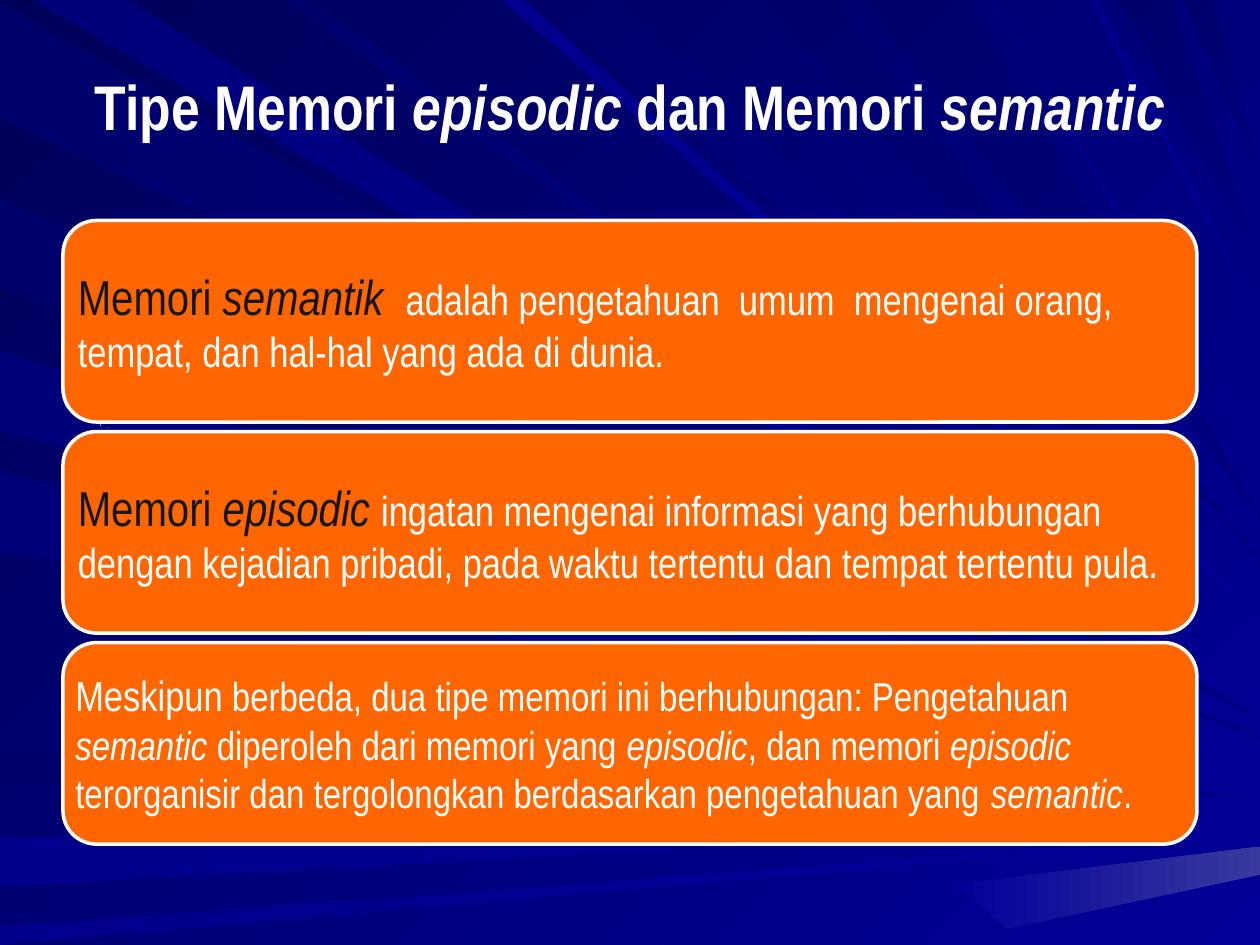
from lxml import etree
from pptx import Presentation
from pptx.dml.color import RGBColor
from pptx.enum.shapes import MSO_SHAPE
from pptx.enum.text import MSO_ANCHOR, PP_ALIGN
from pptx.oxml.ns import qn
from pptx.util import Inches, Pt

ROUND = MSO_SHAPE.ROUNDED_RECTANGLE
MIDDLE = MSO_ANCHOR.MIDDLE
LEFT, CENTER = PP_ALIGN.LEFT, PP_ALIGN.CENTER

COLORS = {"white": "FFFFFF", "ink": "161616", "card": "FF6600",
          "night": "000058", "deep": "00006C", "mid": "00007B",
          "dusk": "000080", "pale": "00008C", "blue": "000099",
          "glint": "39399E"}
NARROW = "Arial Narrow"
WIDE, HIGH = 10, 7.5

# Runs: text, size, colour, italic
TITLE = [("Tipe Memori ", 36, "white", False), ("episodic", 36, "white", True),
         (" dan Memori ", 36, "white", False), ("semantic", 36, "white", True)]

# Cards: text inset, runs
CARDS = [
    (0.04, [
        ("Memori ", 28, "ink", False), ("semantik  ", 28, "ink", True),
        ("adalah pengetahuan  umum  mengenai orang, tempat, dan hal-hal "
         "yang ada di dunia.", 24, "white", False)]),
    (0.04, [
        ("Memori ", 28, "ink", False), ("episodic ", 28, "ink", True),
        ("ingatan mengenai informasi yang berhubungan dengan kejadian pribadi, "
         "pada waktu tertentu dan tempat tertentu pula.", 24, "white", False)]),
    (0.02, [
        ("Meskipun", 24, "white", False),
        (" berbeda, dua tipe memori ini berhubungan: Pengetahuan ", 23, "white", False),
        ("semantic", 23, "white", True),
        (" diperoleh dari memori yang ", 23, "white", False),
        ("episodic", 23, "white", True),
        (", dan memori ", 23, "white", False),
        ("episodic", 23, "white", True),
        (" terorganisir dan tergolongkan berdasarkan pengetahuan yang ", 23, "white", False),
        ("semantic", 23, "white", True), (".", 23, "white", False)]),
]

# Rays: start and end on the edge, height of the tip at the right, colours
LEFT_RAYS = [
    (0.02, 0.93, 5.7, "deep", "dusk"), (1.59, 2.28, 5.85, "deep", "dusk"),
    (2.78, 3.42, 6, "mid", "blue"), (3.74, 4.37, 6.06, "mid", "blue"),
    (5.96, 6.23, 6.32, "deep", "dusk"), (6.65, 7.04, 6.48, "pale", "blue"),
    (7.35, 7.5, 6.62, "pale", "blue"),
]
TOP_RAYS = [
    (0.26, 1.01, 5.63, "mid", "blue"), (2.25, 2.47, 5.5, "deep", "blue"),
    (3.98, 4.16, 5.2, "pale", "blue"), (4.26, 4.92, 4.9, "deep", "blue"),
    (5.4, 5.52, 4.63, "deep", "blue"), (6.06, 6.61, 4.46, "deep", "dusk"),
    (6.86, 7.7, 4.1, "deep", "dusk"), (7.85, 7.92, 3.6, "mid", "blue"),
    (8.65, 8.72, 2.55, "pale", "blue"), (8.87, 9.3, 2.1, "deep", "dusk"),
    (9.39, 9.64, 1.4, "deep", "dusk"),
]
GLINT = [(WIDE, 6.94), (WIDE, 6.72), (7.56, 7.02), (8, 7.37)]


def rgb(name):
    return RGBColor.from_string(COLORS[name])


def blend(fill, first, last, angle):
    """Fill with a gradient; the angle runs clockwise."""
    fill.gradient()
    fill.gradient_angle = (360 - angle) % 360
    for stop, color in zip(fill.gradient_stops, (first, last)):
        stop.color.rgb = rgb(color)


def add_ray(slide, corners, first, last, angle):
    start, *rest = [(Inches(x), Inches(y)) for x, y in corners]
    pen = slide.shapes.build_freeform(*start, scale=1.0)
    pen.add_line_segments(rest, close=True)
    ray = pen.convert_to_shape()
    ray.shadow.inherit = False
    blend(ray.fill, first, last, angle)
    ray.line.fill.background()


def set_frame(shape, left, top, right, bottom):
    frame = shape.text_frame
    frame.word_wrap = True
    frame.margin_left, frame.margin_right = Inches(left), Inches(right)
    frame.margin_top, frame.margin_bottom = Inches(top), Inches(bottom)
    return frame


def write(frame, runs, align, bold=False, face=NARROW):
    para = frame.paragraphs[0]
    para.alignment = align
    for text, size, color, slant in runs:
        run = para.add_run()
        run.text = text
        font = run.font
        font.name, font.size = face, Pt(size)
        font.bold, font.italic = bold, slant
        font.color.rgb = rgb(color)


def add_card(slide, top, inset, runs):
    card = slide.shapes.add_shape(ROUND, Inches(0.5), Inches(top), Inches(9), Inches(1.6))
    card.shadow.inherit = False
    card.fill.solid()
    card.fill.fore_color.rgb = rgb("card")
    card.line.color.rgb = rgb("white")
    card.line.width = Pt(2)
    frame = set_frame(card, inset, inset, inset, inset)
    frame.vertical_anchor = MIDDLE
    write(frame, runs, LEFT)


def add_dot(slide, top):
    """Add the tiny bulleted full stop between two cards."""
    box = slide.shapes.add_textbox(Inches(0.5), Inches(top), Inches(9), Inches(0.07))
    frame = set_frame(box, 0.29, 0.01, 0.04, 0.01)
    props = frame.paragraphs[0]._p.get_or_add_pPr()
    props.set("marL", str(Inches(0.06)))
    props.set("indent", str(-Inches(0.06)))
    etree.SubElement(props, qn("a:buChar")).set("char", "•")
    write(frame, [(".", 3, "white", False)], LEFT, face="Arial")


def main():
    deck = Presentation()
    deck.slide_width, deck.slide_height = Inches(WIDE), Inches(HIGH)
    slide = deck.slides.add_slide(deck.slide_layouts[6])
    blend(slide.background.fill, "night", "blue", 45)
    for start, end, tip, first, last in LEFT_RAYS:
        add_ray(slide, [(0, start), (WIDE, tip), (0, end)], first, last, 0)
    for start, end, tip, first, last in TOP_RAYS:
        add_ray(slide, [(start, 0), (WIDE, tip), (end, 0)], first, last, 45)
    add_ray(slide, GLINT, "blue", "glint", 0)

    title = slide.shapes.add_textbox(Inches(0.5), Inches(0.42), Inches(9), Inches(0.83))
    frame = set_frame(title, 0.1, 0.05, 0.1, 0.05)
    frame.vertical_anchor = MIDDLE
    write(frame, TITLE, CENTER, bold=True)

    for i, (inset, runs) in enumerate(CARDS):
        add_card(slide, 1.75 + 1.675 * i, inset, runs)
    add_dot(slide, 3.35)
    deck.save("out.pptx")


if __name__ == "__main__":
    main()
